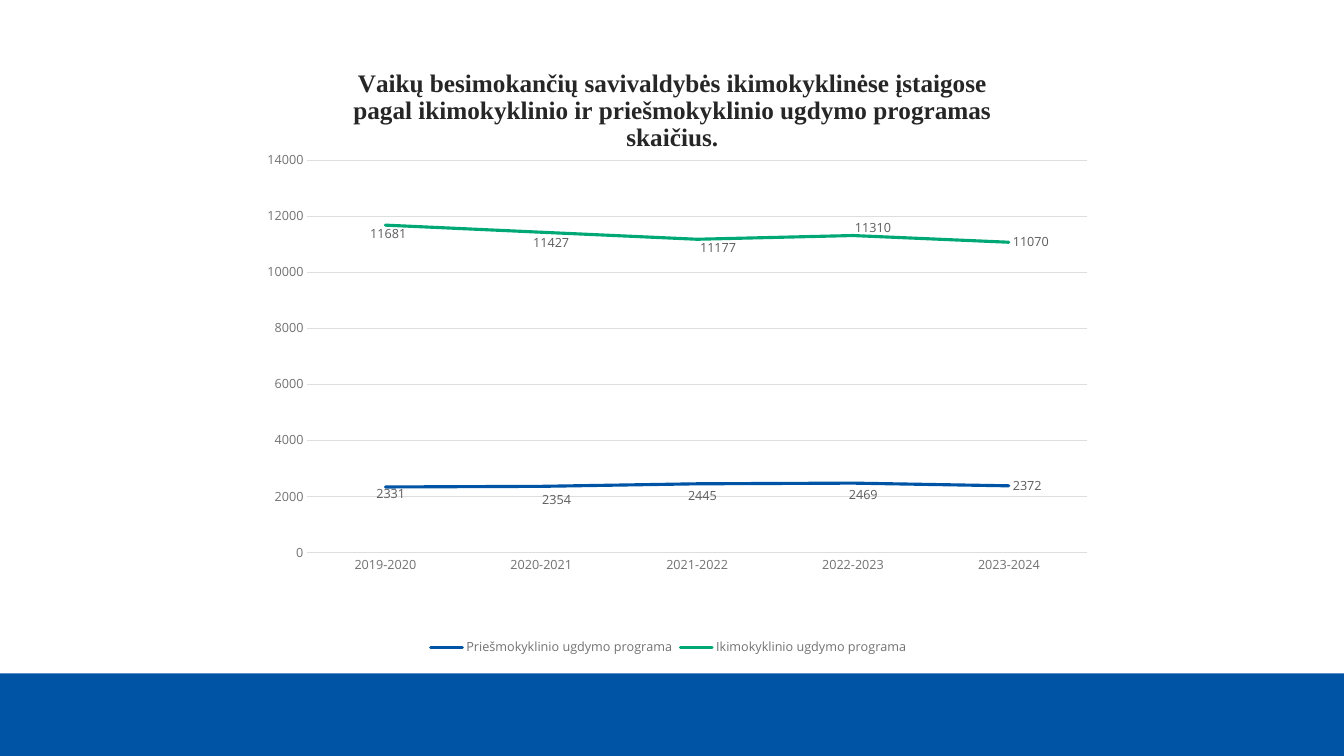
"""Build a slide with a line chart of children in preschool programmes."""
import pptx
import pptx.chart.data
import pptx.dml.color
import pptx.enum.chart
import pptx.enum.shapes
import pptx.oxml
import pptx.oxml.ns
import pptx.util
from pptx.util import Inches, Pt

TITLE = ("Vaikų besimokančių savivaldybės ikimokyklinėse įstaigose pagal "
         "ikimokyklinio ir priešmokyklinio ugdymo programas skaičius.")
YEARS = ["2019-2020", "2020-2021", "2021-2022", "2022-2023", "2023-2024"]
PROGRAMMES = [
    {"name": "Priešmokyklinio ugdymo programa", "color": "0054A5",
     "values": [2331, 2354, 2445, 2469, 2372],
     "label_shifts": [(-0.13, 0.07), (-0.03, 0.13), (-0.13, 0.12), (-0.08, 0.12)]},
    {"name": "Ikimokyklinio ugdymo programa", "color": "00A875",
     "values": [11681, 11427, 11177, 11310, 11070],
     "label_shifts": [(-0.19, 0.09), (-0.12, 0.11), (-0.01, 0.08), (-0.02, -0.08)]},
]
SLIDE_WIDTH, SLIDE_HEIGHT = 13.33, 7.5
BAND_HEIGHT = 0.82
CHART_LEFT, CHART_TOP, CHART_WIDTH, CHART_HEIGHT = 2.31, 0.38, 8.64, 6.17
PLOT_BOX = (0.74, 1.21, 7.73, 3.89)
TITLE_CORNER = (1.15, 0.24)
BLUE, GRID, GREY, LABEL_GREY, DARK = "0054A5", "DEDEDE", "727272", "5C5C5C", "262626"


def color(value):
    return pptx.dml.color.RGBColor.from_string(value)


def set_font(font, size, value, name="Open Sans", bold=False):
    font.size, font.name, font.bold = Pt(size), name, bold
    font.color.rgb = color(value)


def set_line(line, value, width):
    line.color.rgb = color(value)
    line.width = Pt(width)


def place(parent, index, lengths, modes):
    for old in parent.findall(pptx.oxml.ns.qn("c:layout")):
        parent.remove(old)
    sizes = (CHART_WIDTH, CHART_HEIGHT, CHART_WIDTH, CHART_HEIGHT)
    parts = "".join(f'<c:{mode} val="{value}"/>' for mode, value in modes)
    parts += "".join(f'<c:{key} val="{length / size:.4f}"/>'
                     for key, length, size in zip("xywh", lengths, sizes))
    parent.insert(index, pptx.oxml.parse_xml(
        f'<c:layout {pptx.oxml.ns.nsdecls("c")}><c:manualLayout>{parts}'
        '</c:manualLayout></c:layout>'))


def add_chart(page):
    data = pptx.chart.data.CategoryChartData()
    data.categories = YEARS
    for programme in PROGRAMMES:
        data.add_series(programme["name"], programme["values"])
    chart = page.shapes.add_chart(
        pptx.enum.chart.XL_CHART_TYPE.LINE, Inches(CHART_LEFT), Inches(CHART_TOP),
        Inches(CHART_WIDTH), Inches(CHART_HEIGHT), data).chart
    set_font(chart.font, 10, DARK)
    chart.plots[0].vary_by_categories = False
    return chart


def style_title(chart):
    paragraph = chart.chart_title.text_frame.paragraphs[0]
    paragraph.text = TITLE
    set_font(paragraph.font, 18, DARK, "Times New Roman", True)


def style_axes(chart):
    for axis in (chart.category_axis, chart.value_axis):
        axis.major_tick_mark = pptx.enum.chart.XL_TICK_MARK.NONE
        axis.minor_tick_mark = pptx.enum.chart.XL_TICK_MARK.NONE
        set_font(axis.tick_labels.font, 9, GREY)
    set_line(chart.category_axis.format.line, GRID, 0.75)
    values = chart.value_axis
    values.format.line.fill.background()
    values.minimum_scale, values.maximum_scale, values.major_unit = 0, 14000, 2000
    set_line(values.major_gridlines.format.line, GRID, 0.75)


def style_legend(chart):
    chart.has_legend = True
    chart.legend.position = pptx.enum.chart.XL_LEGEND_POSITION.BOTTOM
    chart.legend.include_in_layout = False
    set_font(chart.legend.font, 9, GREY)


def style_series(series, programme):
    right = pptx.enum.chart.XL_LABEL_POSITION.RIGHT
    series.smooth = False
    series.marker.style = pptx.enum.chart.XL_MARKER_STYLE.NONE
    set_line(series.format.line, programme["color"], 2.25)
    for outline in series.format.line.fill._xPr.iter(pptx.oxml.ns.qn("a:ln")):
        outline.set("cap", "rnd")
    labels = series.data_labels
    labels.show_value, labels.position = True, right
    set_font(labels.font, 9, LABEL_GREY)
    for index in range(len(programme["label_shifts"])):
        label = series.points[index].data_label
        set_font(label.font, 9, LABEL_GREY)
        label.position = right
    for leader in series._element.iter(pptx.oxml.ns.qn("c:showLeaderLines")):
        leader.set("val", "0")
    for element, shift in zip(series._element.iter(pptx.oxml.ns.qn("c:dLbl")),
                              programme["label_shifts"]):
        place(element, 1, shift, [])


def main():
    deck = pptx.Presentation()
    deck.slide_width, deck.slide_height = Inches(SLIDE_WIDTH), Inches(SLIDE_HEIGHT)
    page = deck.slides.add_slide(deck.slide_layouts[6])
    band = page.shapes.add_shape(
        pptx.enum.shapes.MSO_SHAPE.RECTANGLE, 0, Inches(SLIDE_HEIGHT - BAND_HEIGHT),
        Inches(SLIDE_WIDTH), Inches(BAND_HEIGHT))
    band.shadow.inherit = False
    band.fill.solid()
    band.fill.fore_color.rgb = color(BLUE)
    band.line.fill.background()
    chart = add_chart(page)
    style_title(chart)
    style_axes(chart)
    style_legend(chart)
    for series, programme in zip(chart.plots[0].series, PROGRAMMES):
        style_series(series, programme)
    edges = [("xMode", "edge"), ("yMode", "edge")]
    place(chart.chart_title._element, 1, TITLE_CORNER, edges)
    plot_area = chart._chartSpace.find(".//" + pptx.oxml.ns.qn("c:plotArea"))
    place(plot_area, 0, PLOT_BOX, [("layoutTarget", "inner")] + edges)
    deck.save("out.pptx")


if __name__ == "__main__":
    main()
